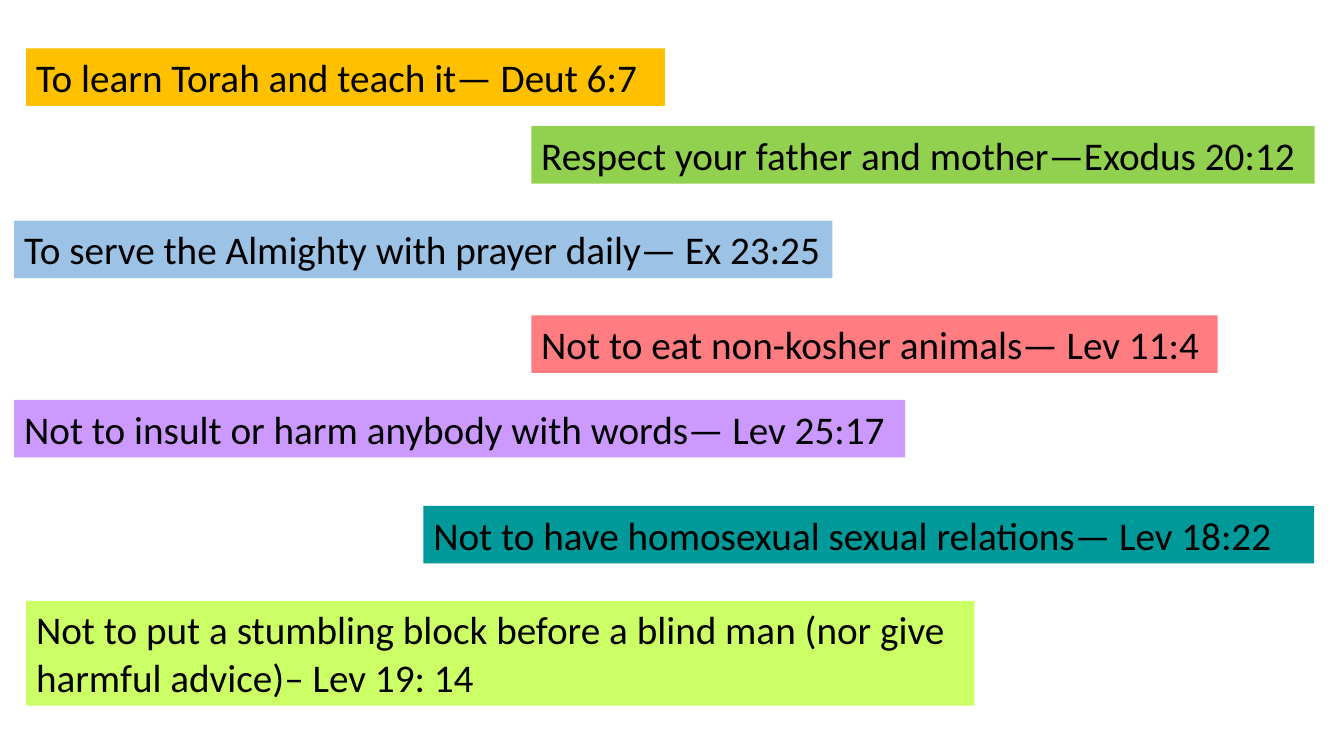
from pptx import Presentation
from pptx import util as u
from pptx.dml import color
from pptx.enum import text

LINE_HEIGHT = 1.45
TWO_LINE_HEIGHT = 2.64

# Commandments from top to bottom: wording, fill, left, top, width, height (cm)
COMMANDMENTS = [
    ("To learn Torah and teach it— Deut 6:7",
     "FFC000", 0.66, 1.22, 16.1, LINE_HEIGHT),
    ("Respect your father and mother—Exodus 20:12",
     "92D050", 13.39, 3.18, 19.74, LINE_HEIGHT),
    ("To serve the Almighty with prayer daily— Ex 23:25",
     "9CC2E5", 0.36, 5.56, 20.62, LINE_HEIGHT),
    ("Not to eat non-kosher animals— Lev 11:4",
     "FF7C80", 13.39, 7.95, 17.3, LINE_HEIGHT),
    ("Not to insult or harm anybody with words— Lev 25:17",
     "CC99FF", 0.36, 10.08, 22.45, LINE_HEIGHT),
    ("Not to have homosexual sexual relations— Lev 18:22",
     "009999", 10.67, 12.75, 22.45, LINE_HEIGHT),
    ("Not to put a stumbling block before a blind man "
     "(nor give harmful advice)– Lev 19: 14",
     "CCFF66", 0.66, 15.14, 23.9, TWO_LINE_HEIGHT),
]


def paint(target, hex_colour):
    """Give a solid fill the colour."""
    target.solid()
    target.fore_color.rgb = color.RGBColor.from_string(hex_colour)


def add_commandment(page, wording, fill, left, top, width, height):
    """Add a coloured text box holding one commandment."""
    box = page.shapes.add_textbox(
        u.Cm(left), u.Cm(top), u.Cm(width), u.Cm(height))
    paint(box.fill, fill)
    frame = box.text_frame
    frame.word_wrap = True
    frame.vertical_anchor = text.MSO_ANCHOR.TOP
    frame.text = wording
    for span in frame.paragraphs[0].runs:
        span.font.name = "Calibri"
        span.font.size = u.Pt(28)
        paint(span.font.fill, "000000")


def main():
    # Widescreen deck with one blank page
    deck = Presentation()
    deck.slide_width, deck.slide_height = u.Cm(33.87), u.Cm(19.05)
    page = deck.slides.add_slide(deck.slide_layouts.get_by_name("Blank"))

    # Commandments
    for commandment in COMMANDMENTS:
        add_commandment(page, *commandment)

    deck.save("out.pptx")


if __name__ == "__main__":
    main()
